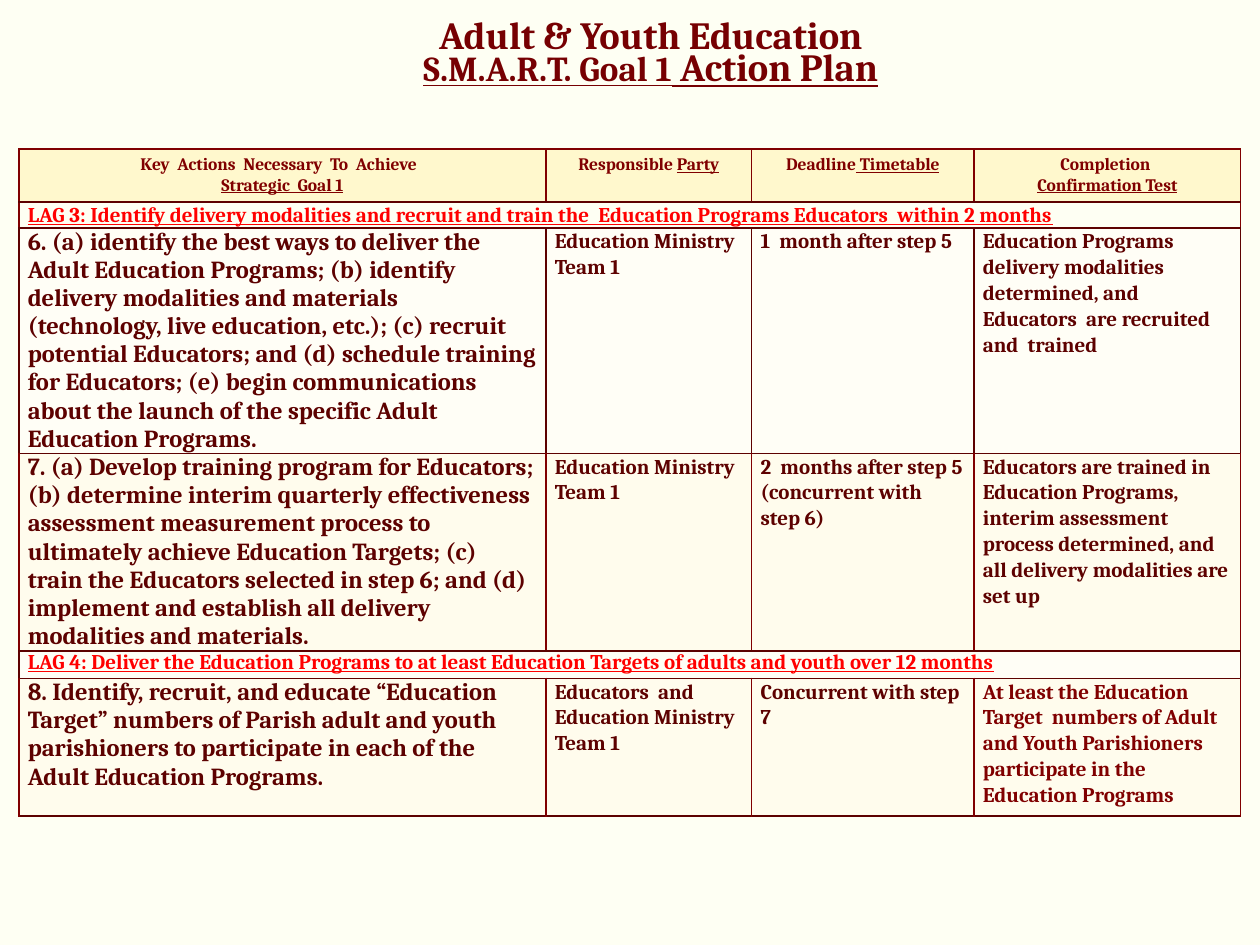
from lxml.etree import SubElement
from pptx import Presentation
from pptx.dml.color import RGBColor as RGB
from pptx.enum.text import MSO_ANCHOR as Anchor, PP_ALIGN as Align
from pptx.oxml.ns import qn
from pptx.util import Pt

IVORY = RGB(0xFE, 0xFF, 0xF3)
HEADER_GOLD = RGB(0xFF, 0xF8, 0xCD)
PALE = RGB(0xFF, 0xFE, 0xF6)
CREAM = RGB(0xFF, 0xFC, 0xED)
MAROON = RGB(0x80, 0x00, 0x00)
DARK_MAROON = RGB(0x5D, 0x01, 0x00)
TITLE_MAROON = RGB(0x76, 0x00, 0x02)
RED = RGB(0xFF, 0x00, 0x00)

FONT = {"name": "Cambria", "bold": True}
SLIM = {"margin_left": Pt(5.1), "margin_right": Pt(5.1), "margin_top": 0, "margin_bottom": 0}
LOOSE = {"line_spacing": 1.07}
COLUMN_WIDTHS = (301.2, 117.6, 127, 152.4)

HEADINGS = (
    ((("Key  Actions  Necessary  To  Achieve  ", False),), (("Strategic  Goal 1", True),)),
    ((("Responsible ", False), ("Party", True)),),
    ((("Deadline", False), (" Timetable", True)),),
    ((("Completion ", False),), (("Confirmation Test", True),)),
)
LAG_3 = ("LAG 3: Identify delivery modalities and recruit and train the  "
         "Education Programs Educators  within 2 months")
LAG_4 = ("LAG 4: Deliver the Education Programs to at least Education Targets "
         "of adults and youth over 12 months")
STEP_6 = (
    "6. (a) identify the best ways to deliver the Adult Education Programs; (b) identify "
    "delivery modalities and materials (technology, live education, etc.); (c) recruit "
    "potential Educators; and (d) schedule training for Educators; (e) begin communications "
    "about the launch of the specific Adult Education Programs.",
    "Education Ministry Team 1",
    "1  month after step 5",
    "Education Programs delivery modalities determined, and Educators  are recruited "
    "and  trained",
)
STEP_7 = (
    "7. (a) Develop training program for Educators; (b) determine interim quarterly "
    "effectiveness assessment measurement process to ultimately achieve Education Targets; "
    "(c) train the Educators selected in step 6; and (d) implement and establish all "
    "delivery modalities and materials.",
    "Education Ministry Team 1",
    "2  months after step 5 (concurrent with step 6)",
    "Educators are trained in Education Programs, interim assessment process determined, "
    "and all delivery modalities are set up",
)
STEP_8 = (
    "8. Identify, recruit, and educate “Education Target” numbers of Parish adult and youth "
    "parishioners to participate in each of the Adult Education Programs.",
    "Educators  and Education Ministry Team 1",
    "Concurrent with step 7",
    "At least the Education Target  numbers of Adult and Youth Parishioners  participate "
    "in the Education Programs",
)


def apply(target, values):
    """Set each named attribute of the target."""
    for name, value in values.items():
        setattr(target, name, value)


def write(paragraph, text, size, color, underline=False):
    """Add one formatted run to a paragraph."""
    run = paragraph.add_run()
    run.text = text
    apply(run.font, {**FONT, "size": Pt(size), "underline": underline})
    run.font.color.rgb = color


def draw_borders(cell, sides, edges):
    """Outline a cell with one-point lines."""
    properties = cell._tc.get_or_add_tcPr()
    colors = {"lnL": sides, "lnR": sides, "lnT": edges, "lnB": edges}
    for position, (tag, color) in enumerate(colors.items()):
        line = SubElement(properties, qn(f"a:{tag}"), w=str(Pt(1)))
        fill = SubElement(line, qn("a:solidFill"))
        SubElement(fill, qn("a:srgbClr"), val=str(color))
        properties.insert(position, line)


def style_row(row, fill, sides, edges):
    """Fill and outline every cell in a row."""
    for cell in row.cells:
        if fill is None:
            cell.fill.background()
        else:
            cell.fill.solid()
            cell.fill.fore_color.rgb = fill
        draw_borders(cell, sides, edges)


def add_headings(row):
    """Write the centred column headings."""
    style_row(row, HEADER_GOLD, MAROON, MAROON)
    for cell, lines in zip(row.cells, HEADINGS):
        frame = cell.text_frame
        for index, parts in enumerate(lines):
            paragraph = frame.add_paragraph() if index else frame.paragraphs[0]
            paragraph.alignment = Align.CENTER
            for text, underline in parts:
                write(paragraph, text, 10, MAROON, underline)


def add_lag(row, text, fill, sides, spacing):
    """Write a goal line across the full row."""
    style_row(row, fill, sides, DARK_MAROON)
    goal = row.cells[0]
    goal.merge(row.cells[len(COLUMN_WIDTHS) - 1])
    apply(goal, SLIM)
    paragraph = goal.text_frame.paragraphs[0]
    apply(paragraph, spacing)
    write(paragraph, text, 12, RED, True)


def add_step(row, texts, fill, sides, test_color=DARK_MAROON):
    """Write an action with its party, deadline and completion test."""
    style_row(row, fill, sides, DARK_MAROON)
    sizes = (14, 12, 12, 12)
    colors = (DARK_MAROON, DARK_MAROON, DARK_MAROON, test_color)
    spacings = ({}, LOOSE, LOOSE, LOOSE)
    for cell, text, size, color, spacing in zip(row.cells, texts, sizes, colors, spacings):
        apply(cell, SLIM)
        paragraph = cell.text_frame.paragraphs[0]
        apply(paragraph, spacing)
        write(paragraph, text, size, color)


def add_title(slide):
    """Add the two-line slide title."""
    title = slide.shapes.add_textbox(Pt(18), Pt(-13), Pt(707.8), Pt(90))
    apply(title.text_frame, {"word_wrap": True, "vertical_anchor": Anchor.MIDDLE})
    paragraph = title.text_frame.paragraphs[0]
    apply(paragraph, {"alignment": Align.CENTER, "line_spacing": 0.7})
    write(paragraph, "Adult & Youth Education", 22, TITLE_MAROON)
    paragraph.add_line_break()
    write(paragraph, "S.M.A.R.T. Goal 1", 20, TITLE_MAROON, True)
    write(paragraph, " Action Plan", 22, TITLE_MAROON, True)


def add_plan(slide):
    """Add the action plan table."""
    heights = (30, 15, 128, 112, 15.8, 78.5)
    plan = slide.shapes.add_table(len(heights), len(COLUMN_WIDTHS), Pt(10.8), Pt(85),
                                  Pt(sum(COLUMN_WIDTHS)), Pt(sum(heights))).table
    for column, width in zip(plan.columns, COLUMN_WIDTHS):
        column.width = Pt(width)
    for row, height in zip(plan.rows, heights):
        row.height = Pt(height)
    header, lag_3, step_6, step_7, lag_4, step_8 = plan.rows
    add_headings(header)
    add_lag(lag_3, LAG_3, None, MAROON, LOOSE)
    add_step(step_6, STEP_6, PALE, DARK_MAROON)
    add_step(step_7, STEP_7, CREAM, MAROON)
    add_lag(lag_4, LAG_4, PALE, DARK_MAROON, {})
    add_step(step_8, STEP_8, CREAM, MAROON, MAROON)


def main():
    """Build and save the action plan slide."""
    deck = Presentation()
    apply(deck, {"slide_width": Pt(720), "slide_height": Pt(540)})
    slide = deck.slides.add_slide(deck.slide_layouts[6])
    slide.background.fill.solid()
    slide.background.fill.fore_color.rgb = IVORY
    add_plan(slide)
    add_title(slide)
    deck.save("out.pptx")


if __name__ == "__main__":
    main()
